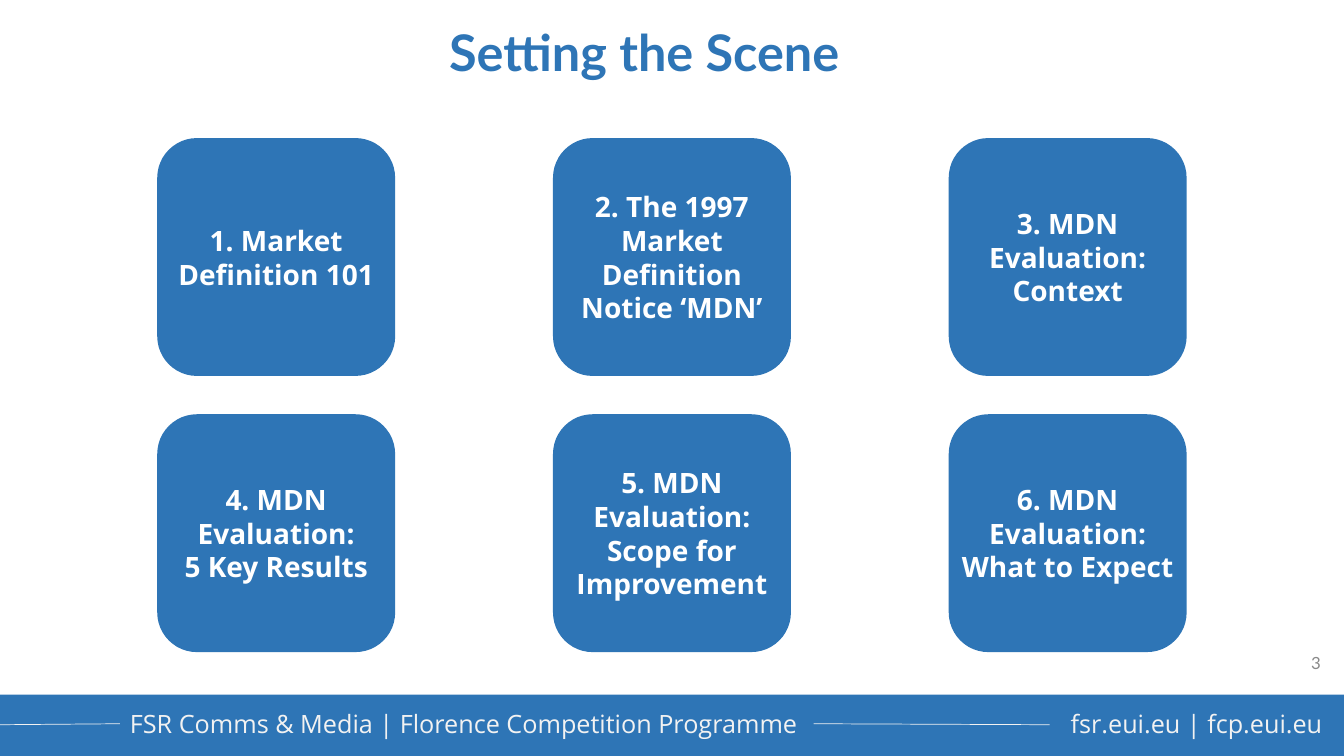
from lxml import etree
from pptx import Presentation
from pptx.dml.color import RGBColor
from pptx.enum.shapes import MSO_CONNECTOR, MSO_SHAPE
from pptx.enum.text import MSO_ANCHOR as Anchor, PP_ALIGN as Align
from pptx.oxml.ns import qn
from pptx.util import Inches, Pt

# Content
TITLE = "Setting the Scene"
TOPICS = [
    ["1. Market Definition 101"],
    ["2. The 1997 Market Definition Notice ‘MDN’"],
    ["3. MDN Evaluation: Context"],
    ["4. MDN Evaluation:", "5 Key Results"],
    ["5. MDN Evaluation: Scope for Improvement"],
    ["6. MDN Evaluation: What to Expect"],
]
PAGE_NUMBER = "3"
# Footer texts: wording, left, width
FOOTER_TEXTS = [
    ("FSR Comms & Media | Florence Competition Programme", 1.19, 6.88),
    ("fsr.eui.eu | fcp.eui.eu", 10.52, 2.86),
]
# Footer rules: start x, start y, end x, end y
FOOTER_RULES = [(0, 7.19, 1.19, 7.18), (8.07, 7.18, 10.41, 7.19)]

# Look and layout
BLUE, WHITE, PALE, GRAY = "2E75B6", "FFFFFF", "F2F2F2", "898989"
SLIDE_WIDTH, SLIDE_HEIGHT = 13.33, 7.5
FOOTER_TOP = 6.89
COLUMNS = 3
TILE_SIZE = 2.36
TILE_LEFT, TILE_TOP = 1.56, 1.37
COLUMN_STEP, ROW_STEP = 3.925, 2.74


def color(value):
    return RGBColor.from_string(value)


def write(shape, lines, font="Open Sans", size=18, fill=PALE, bold=False,
          align=Align.LEFT, anchor=Anchor.TOP, wrap=True, margin=None):
    frame = shape.text_frame
    frame.word_wrap = wrap
    frame.vertical_anchor = anchor
    if margin is not None:
        frame.margin_left = frame.margin_right = Inches(margin)
        frame.margin_top = frame.margin_bottom = Inches(margin)
    frame.text = "\n".join(lines)
    for paragraph in frame.paragraphs:
        paragraph.alignment = align
        paragraph.font.name = font
        paragraph.font.size = Pt(size)
        paragraph.font.bold = bold
        paragraph.font.color.rgb = color(fill)


def add_block(slide, kind, left, top, width, height):
    shape = slide.shapes.add_shape(
        kind, Inches(left), Inches(top), Inches(width), Inches(height))
    shape.shadow.inherit = False
    shape.fill.solid()
    shape.fill.fore_color.rgb = color(BLUE)
    shape.line.fill.background()
    return shape


def add_text(slide, text, left, top, width, height, **style):
    box = slide.shapes.add_textbox(
        Inches(left), Inches(top), Inches(width), Inches(height))
    write(box, [text], **style)


def add_footer(slide):
    add_block(slide, MSO_SHAPE.RECTANGLE, 0, FOOTER_TOP,
              SLIDE_WIDTH, SLIDE_HEIGHT - FOOTER_TOP)
    for text, left, width in FOOTER_TEXTS:
        add_text(slide, text, left, 6.98, width, 0.4)
    for ends in FOOTER_RULES:
        rule = slide.shapes.add_connector(
            MSO_CONNECTOR.STRAIGHT, *[Inches(value) for value in ends])
        rule.line.color.rgb = color(PALE)
        rule.line.width = Pt(0.5)
        etree.SubElement(rule._element.spPr, qn("a:effectLst"))


def add_title(slide):
    title = slide.shapes.title
    title.left, title.top = Inches(4.22), Inches(0.16)
    title.width, title.height = Inches(4.34), Inches(0.71)
    write(title, [TITLE], font="Lato", size=36, fill=BLUE, bold=True,
          align=Align.CENTER, wrap=False)


def add_tiles(slide):
    for index, lines in enumerate(TOPICS):
        row, column = divmod(index, COLUMNS)
        tile = add_block(slide, MSO_SHAPE.ROUNDED_RECTANGLE,
                         TILE_LEFT + column * COLUMN_STEP,
                         TILE_TOP + row * ROW_STEP, TILE_SIZE, TILE_SIZE)
        write(tile, lines, size=20, fill=WHITE, bold=True,
              align=Align.CENTER, anchor=Anchor.MIDDLE, margin=0)


def main():
    presentation = Presentation()
    presentation.slide_width = Inches(SLIDE_WIDTH)
    presentation.slide_height = Inches(SLIDE_HEIGHT)
    slide = presentation.slides.add_slide(presentation.slide_layouts[5])
    add_footer(slide)
    add_title(slide)
    add_tiles(slide)
    add_text(slide, PAGE_NUMBER, 10.2, 6.38, 3, 0.4, font="Lato", size=12,
             fill=GRAY, align=Align.RIGHT, anchor=Anchor.MIDDLE)
    presentation.save("out.pptx")


if __name__ == "__main__":
    main()
